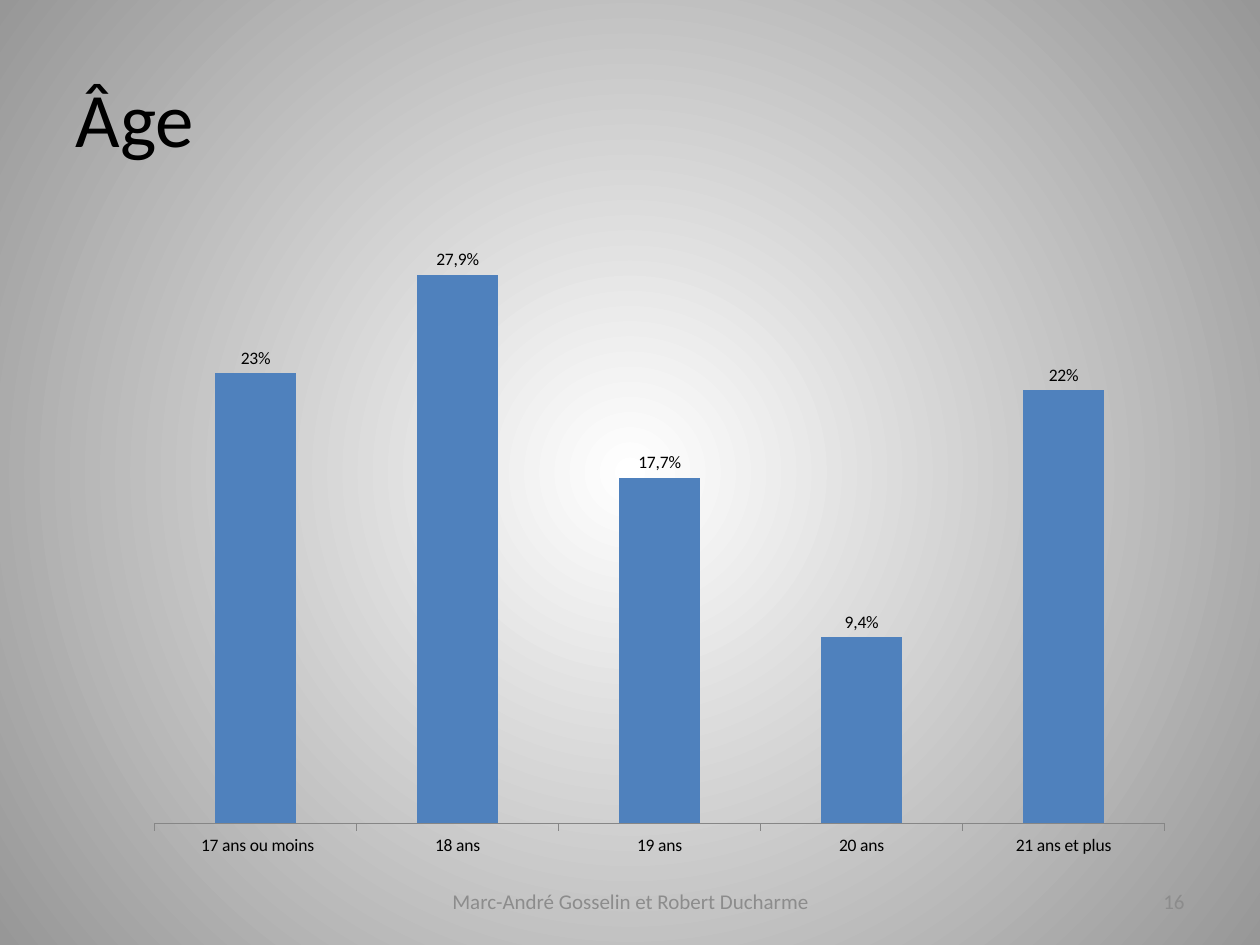
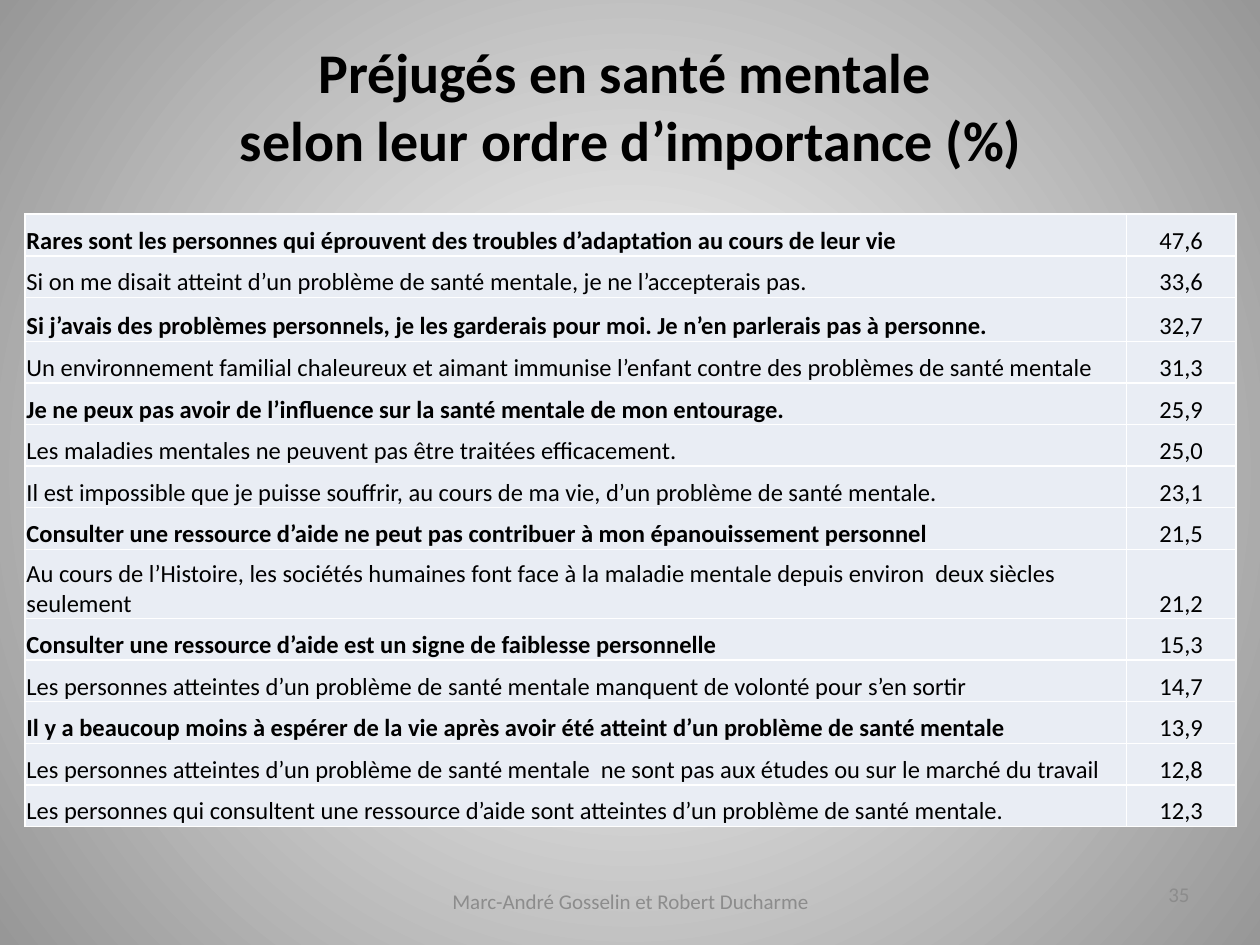
from lxml.etree import SubElement as Sub
from pptx import Presentation
from pptx.chart.data import CategoryChartData as Data
from pptx.dml.color import RGBColor as RGB
from pptx.enum.chart import XL_CHART_TYPE as Kind, XL_LABEL_POSITION as Spot
from pptx.enum.chart import XL_TICK_MARK as Tick
from pptx.enum.text import MSO_ANCHOR as Anchor, PP_ALIGN as Align
from pptx.oxml import parse_xml
from pptx.oxml.ns import nsdecls, qn
from pptx.util import Inches, Pt

BLACK = RGB(0x00, 0x00, 0x00)
WHITE = RGB(0xFF, 0xFF, 0xFF)
EDGE = RGB(0x97, 0x97, 0x97)
GRAY = RGB(0x8C, 0x8C, 0x8C)
AXIS = RGB(0x86, 0x86, 0x86)
BLUE = RGB(0x4F, 0x81, 0xBD)
PALE = RGB(0xE9, 0xED, 0xF4)
FONT = "Calibri"
AUTHORS = "Marc-André Gosselin et Robert Ducharme"

# Age group, bar height, label
AGES = [
    (" 17 ans ou moins", 82, "23%"),
    ("18 ans", 100, "27,9%"),
    ("19 ans", 63, "17,7%"),
    ("20 ans", 34, "9,4%"),
    ("21 ans et plus", 79, "22%"),
]

# Statement, percentage, bold
VIEWS = [
    ("Rares sont les personnes qui éprouvent des troubles d’adaptation au cours de leur vie", "47,6", True),
    ("Si on me disait atteint d’un problème de santé mentale, je ne l’accepterais pas.", "33,6", False),
    ("Si j’avais des problèmes personnels, je les garderais pour moi. Je n’en parlerais pas à personne.", "32,7", True),
    ("Un environnement familial chaleureux et aimant immunise l’enfant contre des problèmes de santé mentale", "31,3", False),
    ("Je ne peux pas avoir de l’influence sur la santé mentale de mon entourage.", "25,9", True),
    ("Les maladies mentales ne peuvent pas être traitées efficacement.", "25,0", False),
    ("Il est impossible que je puisse souffrir, au cours de ma vie, d’un problème de santé mentale.", "23,1", False),
    ("Consulter une ressource d’aide ne peut pas contribuer à mon épanouissement personnel", "21,5", True),
    ("Au cours de l’Histoire, les sociétés humaines font face à la maladie mentale depuis environ  deux siècles seulement", "21,2", False),
    ("Consulter une ressource d’aide est un signe de faiblesse personnelle", "15,3", True),
    ("Les personnes atteintes d’un problème de santé mentale manquent de volonté pour s’en sortir", "14,7", False),
    ("Il y a beaucoup moins à espérer de la vie après avoir été atteint d’un problème de santé mentale", "13,9", True),
    ("Les personnes atteintes d’un problème de santé mentale  ne sont pas aux études ou sur le marché du travail", "12,8", False),
    ("Les personnes qui consultent une ressource d’aide sont atteintes d’un problème de santé mentale.", "12,3", False),
]
ROW = 0.33
TALL = {2: 0.35, 8: 0.55}


def style(font, size, color=BLACK, bold=False):
    font.name, font.size, font.bold = FONT, Pt(size), bold
    font.color.rgb = color


def write(frame, text, size, align, color=BLACK, bold=False):
    frame.text = text
    for para in frame.paragraphs:
        para.alignment = align
        style(para.font, size, color, bold)


def paint_back(master):
    """Radial gradient behind every slide."""
    fill = master.background.fill
    fill.gradient()
    for stop, color in zip(fill.gradient_stops, (WHITE, EDGE)):
        stop.color.rgb = color
    grad = master.element.find(".//" + qn("a:gradFill"))
    grad.remove(grad.find(qn("a:lin")))
    grad.find(qn("a:gsLst")).addnext(parse_xml(
        f'<a:path {nsdecls("a")} path="circle">'
        '<a:fillToRect l="50000" t="50000" r="50000" b="50000"/></a:path>'))


def add_text(slide, text, box, align):
    frame = slide.shapes.add_textbox(*map(Inches, box)).text_frame
    frame.word_wrap = True
    frame.vertical_anchor = Anchor.MIDDLE
    write(frame, text, 12, align, GRAY)


def add_slide(deck, text, left, top, size, align, bold=False):
    slide = deck.slides.add_slide(deck.slide_layouts[5])
    title = slide.shapes.title
    title.left, title.top = Inches(left), Inches(top)
    title.width, title.height = Inches(9), Inches(1.25)
    title.text_frame.vertical_anchor = Anchor.MIDDLE
    write(title.text_frame, text, size, align, BLACK, bold)
    return slide


def add_foot(slide, number, left, top):
    add_text(slide, AUTHORS, (3.42, 6.95, 3.17, 0.4), Align.CENTER)
    add_text(slide, number, (left, top, 2.33, 0.4), Align.RIGHT)


def set_plot(chart, **sides):
    """Fix the inner plot area, as shares of the chart."""
    area = chart.element.find(".//" + qn("c:plotArea"))
    old = area.find(qn("c:layout"))
    if old is not None:
        area.remove(old)
    layout = parse_xml(f'<c:layout {nsdecls("c")}><c:manualLayout/></c:layout>')
    modes = {"layoutTarget": "inner", "xMode": "edge", "yMode": "edge"}
    for name, val in {**modes, **sides}.items():
        Sub(layout[0], qn("c:" + name)).set("val", str(val))
    area.insert(0, layout)


def add_bars(slide, box):
    names, vals, labels = zip(*AGES)
    data = Data()
    data.categories = names
    data.add_series("Series 1", vals)
    chart = slide.shapes.add_chart(
        Kind.COLUMN_CLUSTERED, *map(Inches, box), data).chart
    chart.has_legend = chart.has_title = False
    style(chart.font, 10)
    set_plot(chart, x=0.02, y=0, w=0.96, h=0.935)

    # Axes
    axis = chart.value_axis
    axis.visible = axis.has_major_gridlines = False
    axis.minimum_scale, axis.maximum_scale = 0, 120
    base = chart.category_axis
    base.major_tick_mark = Tick.OUTSIDE
    base.format.line.color.rgb = AXIS

    # Bars and their labels
    plot = chart.plots[0]
    plot.gap_width = 150
    plot.vary_by_categories = False
    bars = plot.series[0]
    bars.format.fill.solid()
    bars.format.fill.fore_color.rgb = BLUE
    for i, text in enumerate(labels):
        label = bars.points[i].data_label
        write(label.text_frame, text, 10, Align.CENTER)
        label.position = Spot.OUTSIDE_END


def fill_cell(cell, text, align, bold=False):
    cell.margin_left = cell.margin_right = cell.margin_top = Inches(0.01)
    cell.margin_bottom = 0
    cell.vertical_anchor = Anchor.BOTTOM
    write(cell.text_frame, text, 14, align, BLACK, bold)
    props = cell._tc.get_or_add_tcPr()
    for side in "LRTB":
        props.append(parse_xml(
            f'<a:ln{side} {nsdecls("a")} w="{Pt(1)}"><a:solidFill>'
            f'<a:srgbClr val="{WHITE}"/></a:solidFill></a:ln{side}>'))
    cell.fill.solid()
    cell.fill.fore_color.rgb = PALE


def add_views(slide, left, top, widths):
    high = sum(TALL.get(i, ROW) for i in range(len(VIEWS)))
    table = slide.shapes.add_table(
        len(VIEWS), len(widths), Inches(left), Inches(top),
        Inches(sum(widths)), Inches(high)).table
    table.first_row = table.horz_banding = False
    for col, width in zip(table.columns, widths):
        col.width = Inches(width)
    for i, (text, rate, bold) in enumerate(VIEWS):
        table.rows[i].height = Inches(TALL.get(i, ROW))
        fill_cell(table.cell(i, 0), text, Align.LEFT, bold)
        fill_cell(table.cell(i, 1), rate, Align.CENTER)


def main():
    deck = Presentation()
    deck.slide_width, deck.slide_height = Inches(10), Inches(7.5)
    paint_back(deck.slide_master)

    # Age chart
    ages = add_slide(deck, "Âge", 0.5, 0.3, 44, Align.LEFT)
    add_bars(ages, (1.06, 1.31, 8.35, 5.59))
    add_foot(ages, "16", 7.17, 6.95)

    # Table of prejudices
    views = add_slide(
        deck, "Préjugés en santé mentale \vselon leur ordre d’importance (%)",
        0.51, 0.21, 32, Align.CENTER, True)
    add_views(views, 0.2, 1.7, (8.74, 0.87))
    add_foot(views, "35", 7.21, 6.9)

    deck.save("out.pptx")


if __name__ == "__main__":
    main()
